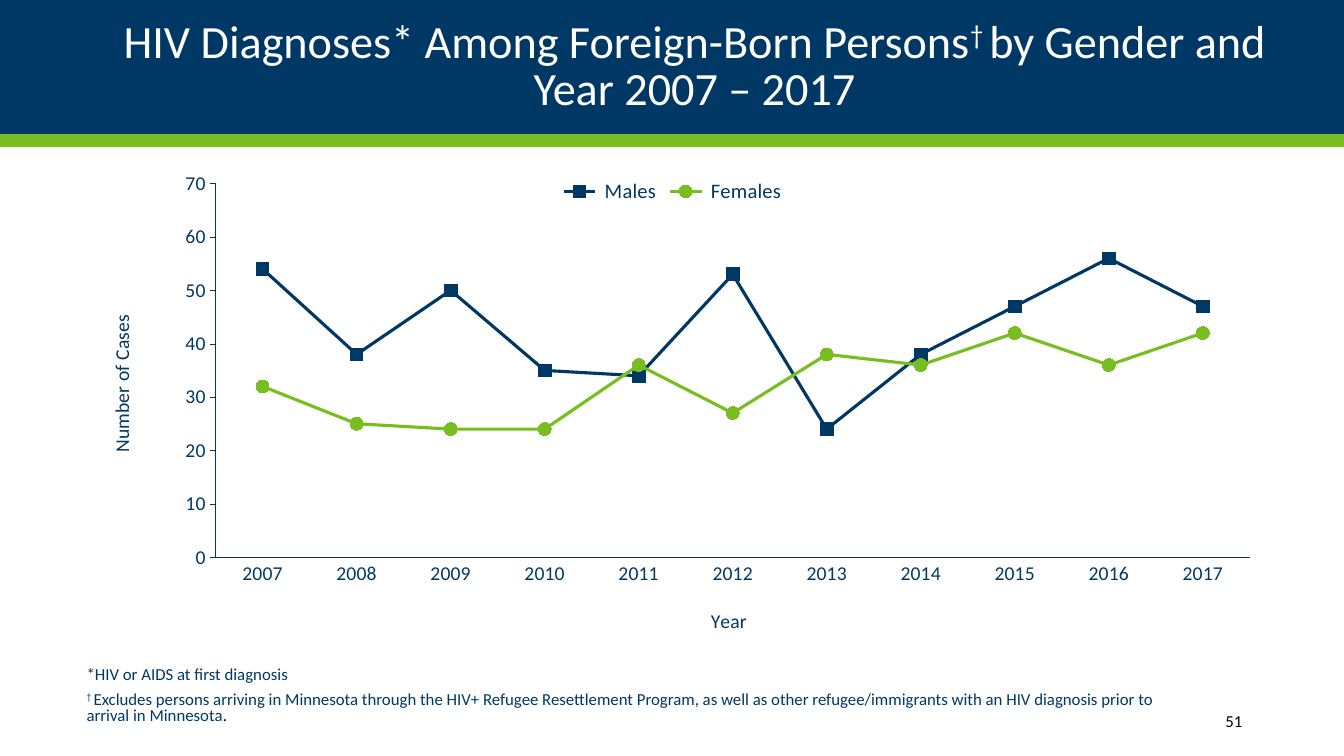
from dataclasses import dataclass, field
from typing import Any

from lxml.etree import SubElement
from pptx import Presentation
from pptx.chart.data import CategoryChartData as ChartData
from pptx.dml.color import RGBColor as Color
from pptx.enum.chart import XL_CHART_TYPE as Kind
from pptx.enum.chart import XL_LEGEND_POSITION as Place
from pptx.enum.chart import XL_MARKER_STYLE as Mark
from pptx.enum.chart import XL_TICK_MARK as Tick
from pptx.enum.shapes import MSO_SHAPE as Shape
from pptx.enum.text import MSO_ANCHOR as Anchor
from pptx.enum.text import PP_ALIGN as Align
from pptx.oxml import parse_xml
from pptx.oxml.ns import nsdecls, qn
from pptx.util import Inches, Pt


@dataclass(frozen=True)
class Theme:
    font: str = "Calibri"
    navy: Color = Color(0x00, 0x38, 0x65)
    green: Color = Color(0x78, 0xBE, 0x21)
    white: Color = Color(0xFF, 0xFF, 0xFF)
    black: Color = Color(0, 0, 0)
    head: float = 33
    note: float = 12
    axis: float = 14
    key: float = 14.7


THEME = Theme()


@dataclass(frozen=True)
class Box:
    left: float
    top: float
    width: float
    height: float

    def emu(self) -> list[int]:
        return [Inches(n) for n in (self.left, self.top, self.width, self.height)]


@dataclass(frozen=True)
class Band:
    box: Box
    color: Color


@dataclass(frozen=True)
class Piece:
    text: str
    color: Color
    raised: bool = False


@dataclass(frozen=True)
class Block:
    box: Box
    size: float
    lines: list[list[Piece]]
    form: dict[str, Any] = field(default_factory=dict)


@dataclass(frozen=True)
class Trend:
    name: str
    cases: list[int]
    color: Color
    mark: Mark


BANDS = [
    Band(Box(0, 0, 13.33, 1.33), THEME.navy),
    Band(Box(0, 1.33, 13.33, 0.13), THEME.green),
]
BLOCKS = [
    Block(
        Box(0.92, 0.17, 11.94, 1), THEME.head,
        [[
            Piece("HIV Diagnoses* Among Foreign-Born Persons", THEME.white),
            Piece("† ", THEME.white, True),
            Piece("by Gender and Year 2007 – 2017", THEME.white),
        ]],
        {"alignment": Align.CENTER, "line_spacing": 0.85},
    ),
    Block(
        Box(0.76, 6.34, 10.95, 1.13), THEME.note,
        [
            [Piece("*HIV or AIDS at first diagnosis", THEME.navy)],
            [
                Piece("† ", THEME.navy, True),
                Piece(
                    "Excludes persons arriving in Minnesota through the HIV+ Refugee "
                    "Resettlement Program, as well as other refugee/immigrants with an "
                    "HIV diagnosis prior to arrival in Minnesota", THEME.navy),
                Piece(".", THEME.black),
            ],
        ],
        {"line_spacing": 0.8, "space_before": Pt(6)},
    ),
    Block(
        Box(10.82, 6.95, 1.6, 0.4), THEME.note,
        [[Piece("51", THEME.black)]], {"alignment": Align.RIGHT},
    ),
]
TRENDS = [
    Trend(" Males", [54, 38, 50, 35, 34, 53, 24, 38, 47, 56, 47],
          THEME.navy, Mark.SQUARE),
    Trend(" Females", [32, 25, 24, 24, 36, 27, 38, 36, 42, 36, 42],
          THEME.green, Mark.CIRCLE),
]
YEARS = [str(year) for year in range(2007, 2018)]
FRAME = Box(0.92, 1.66, 11.5, 4.76)


def apply(target: Any, form: dict[str, Any]) -> None:
    for name, value in form.items():
        setattr(target, name, value)


def style(font: Any, size: float, color: Color) -> None:
    apply(font, {"name": THEME.font, "size": Pt(size), "bold": False})
    font.color.rgb = color


def paint(fill: Any, color: Color) -> None:
    fill.solid()
    fill.fore_color.rgb = color


def draw_band(slide: Any, band: Band) -> None:
    shape = slide.shapes.add_shape(Shape.RECTANGLE, *band.box.emu())
    shape.shadow.inherit = False
    paint(shape.fill, band.color)
    shape.line.fill.background()


def draw_block(slide: Any, block: Block) -> None:
    frame = slide.shapes.add_textbox(*block.box.emu()).text_frame
    apply(frame, {"word_wrap": True, "vertical_anchor": Anchor.MIDDLE})
    for row, line in enumerate(block.lines):
        para = frame.add_paragraph() if row else frame.paragraphs[0]
        apply(para, block.form)
        for piece in line:
            run = para.add_run()
            run.text = piece.text
            style(run.font, block.size, piece.color)
            if piece.raised:
                run._r.get_or_add_rPr().set("baseline", "30000")


def pin(part: Any, index: int, form: dict[str, Any]) -> None:
    for old in part.findall(qn("c:layout")):
        part.remove(old)
    layout = parse_xml(f"<c:layout {nsdecls('c')}><c:manualLayout/></c:layout>")
    for name, value in form.items():
        SubElement(layout[0], qn(f"c:{name}"), val=str(value))
    part.insert(index, layout)


def draw_axis(axis: Any, title: str, tick: Tick, left: float, top: float) -> None:
    apply(axis, {"has_major_gridlines": False, "major_tick_mark": tick,
                 "minor_tick_mark": Tick.NONE})
    style(axis.tick_labels.font, THEME.axis, THEME.navy)
    axis.format.line.width = Pt(0.25)
    paint(axis.format.line.fill, THEME.navy)
    run = axis.axis_title.text_frame.paragraphs[0].add_run()
    run.text = title
    style(run.font, THEME.axis, THEME.navy)
    pin(axis.axis_title._element, 1,
        {"xMode": "edge", "yMode": "edge", "x": left, "y": top})


def draw_chart(slide: Any) -> None:
    data = ChartData()
    data.categories = YEARS
    for trend in TRENDS:
        data.add_series(trend.name, trend.cases)
    chart = slide.shapes.add_chart(Kind.LINE_MARKERS, *FRAME.emu(), data).chart
    apply(chart, {"has_title": False, "has_legend": True})
    style(chart.font, THEME.axis, THEME.navy)
    apply(chart.legend, {"position": Place.TOP, "include_in_layout": False})
    style(chart.legend.font, THEME.key, THEME.navy)
    apply(chart.value_axis,
          {"minimum_scale": 0, "maximum_scale": 70, "major_unit": 10})
    draw_axis(chart.category_axis, "Year", Tick.NONE, 0.53, 0.91)
    draw_axis(chart.value_axis, "Number of Cases", Tick.OUTSIDE, 0.01, 0.3)
    pin(chart._chartSpace.chart.plotArea, 0,
        {"layoutTarget": "inner", "xMode": "edge", "yMode": "edge",
         "x": 0.106, "y": 0.034, "w": 0.892, "h": 0.779})
    chart.plots[0].vary_by_categories = False
    for trend, series in zip(TRENDS, chart.plots[0].series):
        series.smooth = False
        series.format.line.width = Pt(2.25)
        apply(series.marker, {"style": trend.mark, "size": 9})
        look = series.marker.format
        for fill in (series.format.line.fill, look.fill, look.line.fill):
            paint(fill, trend.color)


def main() -> None:
    deck = Presentation()
    apply(deck, {"slide_width": Inches(13.33), "slide_height": Inches(7.5)})
    slide = deck.slides.add_slide(deck.slide_layouts[6])
    for band in BANDS:
        draw_band(slide, band)
    for block in BLOCKS:
        draw_block(slide, block)
    draw_chart(slide)
    deck.save("out.pptx")


if __name__ == "__main__":
    main()
